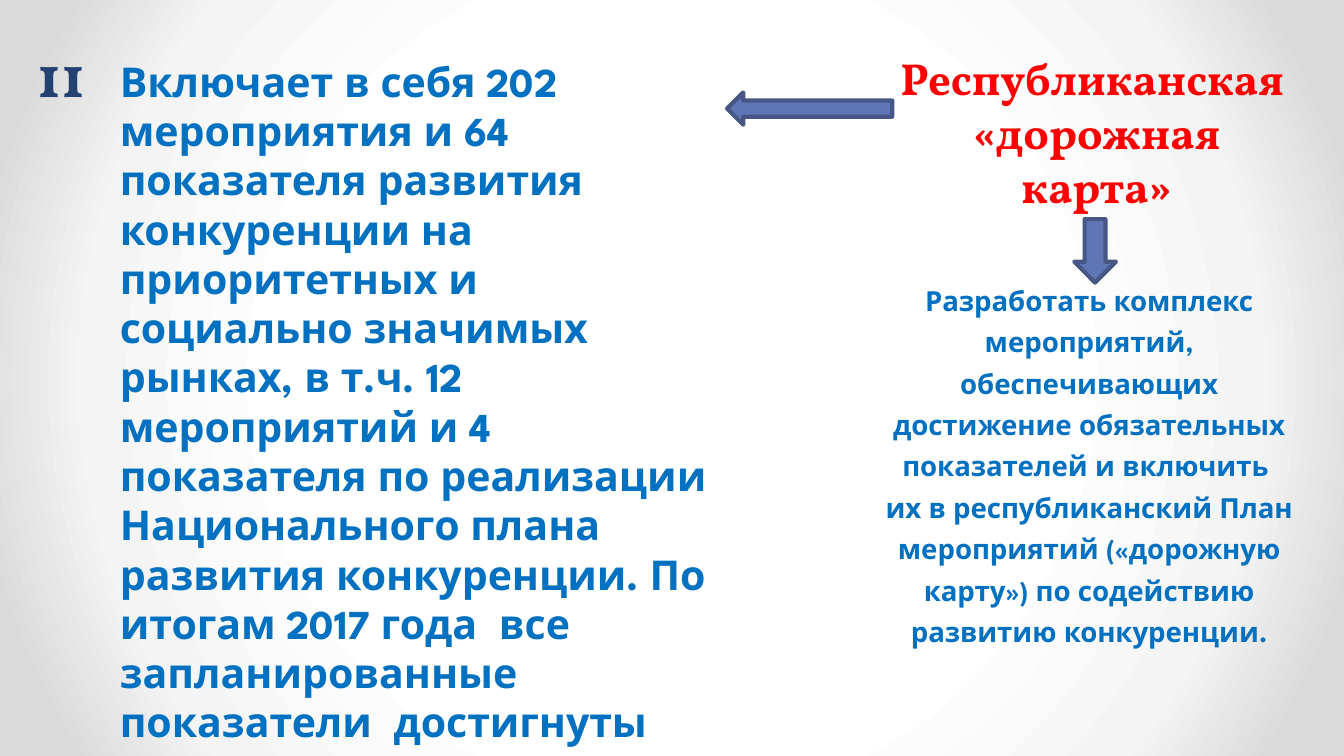
"""Builds the slide on the republican road map for developing competition."""
import lxml.etree
import pptx
import pptx.dml.color
import pptx.enum.shapes
import pptx.enum.text
import pptx.oxml
import pptx.util

Pt = pptx.util.Pt
Align = pptx.enum.text.PP_ALIGN
Anchor = pptx.enum.text.MSO_ANCHOR
Fit = pptx.enum.text.MSO_AUTO_SIZE
Kind = pptx.enum.shapes.MSO_SHAPE
Rgb = pptx.dml.color.RGBColor.from_string

COLORS = {"red": "FF0000", "blue": "0070C0", "navy": "234271",
          "arrow": "6076B4", "edge": "475785"}
STOPS = {50: "FFFFFF", 76: "F4F4F4", 92: "DADADA"}
HEAD, BODY = "Vollkorn", "League Spartan"


def write(shape, text, box, font, size, color, align=Align.LEFT,
          anchor=Anchor.TOP, space=None, wrap=True, fit=Fit.NONE):
    """Places a text shape and fills it with one formatted paragraph."""
    shape.left, shape.top, shape.width, shape.height = map(Pt, box)
    frame = shape.text_frame
    frame.word_wrap, frame.auto_size = wrap, fit
    frame.vertical_anchor = anchor
    para = frame.paragraphs[0]
    para.alignment, para.line_spacing = align, space
    props = para._p.get_or_add_pPr()
    props.set("marL", "0")
    props.set("indent", "0")
    lxml.etree.SubElement(props, pptx.oxml.ns.qn("a:buNone"))
    run = para.add_run()
    run.text = text
    run.font.name, run.font.size, run.font.bold = font, Pt(size), True
    run.font.color.rgb = Rgb(COLORS[color])


deck = pptx.Presentation()
deck.slide_width, deck.slide_height = Pt(720), Pt(405)
slide = deck.slides.add_slide(deck.slide_layouts[7])

fill = slide.background.fill
fill.gradient()
grad = slide.background._cSld.bg.bgPr.find(pptx.oxml.ns.qn("a:gradFill"))
for child in list(grad):
    grad.remove(child)
marks = "".join(f'<a:gs pos="{pos * 1000}"><a:srgbClr val="{tint}"/></a:gs>'
                for pos, tint in STOPS.items())
parts = pptx.oxml.parse_xml(
    f'<a:gradFill {pptx.oxml.ns.nsdecls("a")}><a:gsLst>{marks}</a:gsLst>'
    '<a:path path="circle"><a:fillToRect l="50000" t="50000" r="50000" b="50000"/>'
    '</a:path></a:gradFill>')
for child in list(parts):
    grad.append(child)

title, left, right = slide.placeholders
write(title, "Республиканская  «дорожная карта»", (473, 26.6, 229, 90.7),
      HEAD, 24, "red", align=Align.CENTER, anchor=Anchor.BOTTOM)
write(left, "Включает в себя 202 мероприятия и 64 показателя развития конкуренции "
      "на приоритетных и социально значимых рынках, в т.ч. 12 мероприятий и "
      "4 показателя по реализации Национального плана развития конкуренции. "
      "По итогам 2017 года  все запланированные показатели  достигнуты",
      (57, 26.6, 332.5, 335), BODY, 22, "blue")
write(right, "Разработать комплекс мероприятий, обеспечивающих достижение "
      "обязательных показателей и включить  их в республиканский План "
      "мероприятий («дорожную карту») по содействию развитию конкуренции.",
      (465, 144, 237, 217.5), BODY, 14.8, "blue", align=Align.CENTER, space=1.25)

for kind, box, turn in (
        (Kind.RIGHT_ARROW, (389.5, 49.5, 88.5, 17.3), 180),
        (Kind.DOWN_ARROW, (575.5, 117.4, 22.3, 34), 0)):
    arrow = slide.shapes.add_shape(kind, *map(Pt, box))
    arrow.rotation = turn
    arrow.shadow.inherit = False
    arrow.fill.solid()
    arrow.fill.fore_color.rgb = Rgb(COLORS["arrow"])
    arrow.line.color.rgb = Rgb(COLORS["edge"])
    arrow.line.width = Pt(2.25)

label = slide.shapes.add_textbox(0, 0, 0, 0)
write(label, "11", (13, 16.6, 46.8, 46), HEAD, 32, "navy",
      wrap=False, fit=Fit.SHAPE_TO_FIT_TEXT)

deck.save("out.pptx")
